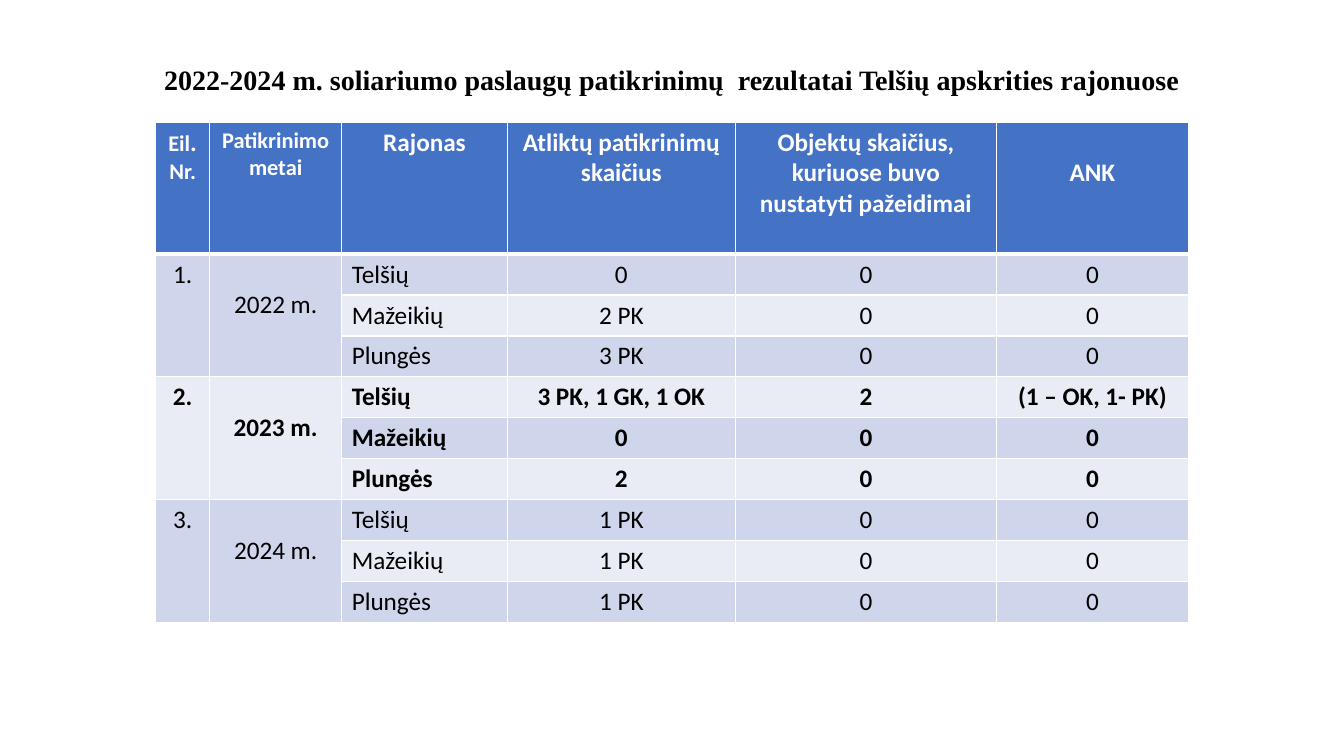
from dataclasses import dataclass

from lxml import etree
from pptx import Presentation
from pptx import util as u
from pptx.dml import color
from pptx.enum import text
from pptx.oxml import ns


# Theme: colours, fonts and type sizes
@dataclass(frozen=True)
class Theme:
    title_font: str = "Times New Roman"
    table_font: str = "Calibri"
    ink: str = "000000"
    white: str = "FFFFFF"
    header: str = "4472C4"
    bands: tuple[str, str] = ("CFD5EA", "E9EBF5")
    title_size: float = 20
    table_size: float = 18
    small_size: float = 16
    rule: float = 1
    header_rule: float = 3


THEME = Theme()
Piece = tuple[str, float]


# Content
@dataclass(frozen=True)
class Column:
    width: float
    heading: list[list[Piece]]
    lowered: bool = False


@dataclass(frozen=True)
class Year:
    number: str
    label: str
    inspections: tuple[str, str, str]
    violations: tuple[str, str, str] = ("0", "0", "0")
    ank: tuple[str, str, str] = ("0", "0", "0")
    bold: bool = False


TITLE = "2022-2024 m. soliariumo paslaugų patikrinimų  rezultatai Telšių apskrities rajonuose"
DISTRICTS = ("Telšių", "Mažeikių", "Plungės")
BIG, SMALL = THEME.table_size, THEME.small_size
COLUMNS = [
    Column(38.6, [[("Eil", SMALL), (".", BIG)], [("Nr.", SMALL)]]),
    Column(94.3, [[("Patikrinimo", SMALL)], [("metai", SMALL)]]),
    Column(118.4, [[("Rajonas", BIG)]]),
    Column(162.8, [[("Atliktų patikrinimų skaičius", BIG)]]),
    Column(186.6, [[("Objektų skaičius, kuriuose buvo nustatyti pažeidimai", BIG)]]),
    Column(137, [[("ANK", BIG)]], lowered=True),
]
YEARS = [
    Year("1.", "2022 m.", ("0", "2 PK", "3 PK")),
    Year("2.", "2023 m.", ("3 PK, 1 GK, 1 OK", "0", "2"), ("2", "0", "0"),
         ("(1 – OK, 1- PK)", "0", "0"), bold=True),
    Year("3.", "2024 m.", ("1 PK", "1 PK", "1 PK")),
]

# Layout
TABLE_LEFT, TABLE_TOP = 111.2, 87.1
HEADER_HEIGHT, ROW_HEIGHT = 94.4, 29.25
CELL_MARGIN, LINE_DROP = 3.6, 22
CENTER, LEFT = text.PP_ALIGN.CENTER, text.PP_ALIGN.LEFT


def add_run(paragraph, words: str, font: str, size: float, ink: str, bold: bool) -> None:
    run = paragraph.add_run()
    run.text = words
    run.font.name, run.font.size, run.font.bold = font, u.Pt(size), bold
    run.font.color.rgb = color.RGBColor.from_string(ink)


def add_borders(cell, top: float, bottom: float) -> None:
    properties = cell._tc.get_or_add_tcPr()
    weights = {"a:lnL": THEME.rule, "a:lnR": THEME.rule, "a:lnT": top, "a:lnB": bottom}
    for position, (side, weight) in enumerate(weights.items()):
        line = etree.Element(ns.qn(side), w=str(u.Pt(weight)))
        fill = etree.SubElement(line, ns.qn("a:solidFill"))
        etree.SubElement(fill, ns.qn("a:srgbClr"), val=THEME.white)
        properties.insert(position, line)


def fill_cell(cell, paragraphs: list[list[Piece]], ink: str, bold: bool,
              align=CENTER, lowered: bool = False) -> None:
    cell.margin_top = u.Pt(CELL_MARGIN + (LINE_DROP if lowered else 0))
    frame = cell.text_frame
    for index, pieces in enumerate(paragraphs):
        paragraph = frame.add_paragraph() if index else frame.paragraphs[0]
        paragraph.alignment = align
        for words, size in pieces:
            add_run(paragraph, words, THEME.table_font, size, ink, bold)


def add_title(slide) -> None:
    title = slide.shapes.title
    title.left, title.top, title.width, title.height = map(u.Pt, (66, 29, 828, 58))
    frame = title.text_frame
    frame.word_wrap = True
    frame.auto_size = text.MSO_AUTO_SIZE.NONE
    frame.vertical_anchor = text.MSO_ANCHOR.MIDDLE
    heading = frame.paragraphs[0]
    heading.alignment, heading.line_spacing = CENTER, 0.9
    add_run(heading, TITLE, THEME.title_font, THEME.title_size, THEME.ink, True)


def add_results(slide) -> None:
    group = len(DISTRICTS)
    body_rows = len(YEARS) * group
    results = slide.shapes.add_table(
        body_rows + 1, len(COLUMNS), u.Pt(TABLE_LEFT), u.Pt(TABLE_TOP),
        u.Pt(sum(column.width for column in COLUMNS)),
        u.Pt(HEADER_HEIGHT + body_rows * ROW_HEIGHT)).table

    # Row heights, fills and borders
    for index, row in enumerate(results.rows):
        row.height = u.Pt(ROW_HEIGHT if index else HEADER_HEIGHT)
        shade = THEME.bands[(index - 1) % 2] if index else THEME.header
        for cell in row.cells:
            cell.fill.solid()
            cell.fill.fore_color.rgb = color.RGBColor.from_string(shade)
            add_borders(cell, THEME.header_rule if index == 1 else THEME.rule,
                        THEME.rule if index else THEME.header_rule)

    # Header row
    for index, column in enumerate(COLUMNS):
        results.columns[index].width = u.Pt(column.width)
        fill_cell(results.cell(0, index), column.heading, THEME.white, True,
                  lowered=column.lowered)

    # One group of districts per year
    for index, year in enumerate(YEARS):
        first = 1 + index * group
        for place, label in enumerate((year.number, year.label)):
            results.cell(first, place).merge(results.cell(first + group - 1, place))
            fill_cell(results.cell(first, place), [[(label, BIG)]], THEME.ink, year.bold,
                      lowered=label == year.label)
        lines = zip(DISTRICTS, year.inspections, year.violations, year.ank)
        for row, values in enumerate(lines, first):
            for place, value in enumerate(values, 2):
                fill_cell(results.cell(row, place), [[(value, BIG)]], THEME.ink, year.bold,
                          LEFT if place == 2 else CENTER)


def main() -> None:
    deck = Presentation()
    deck.slide_width, deck.slide_height = u.Pt(960), u.Pt(540)
    slide = deck.slides.add_slide(deck.slide_layouts.get_by_name("Title Only"))
    add_title(slide)
    add_results(slide)
    deck.save("out.pptx")


if __name__ == "__main__":
    main()
